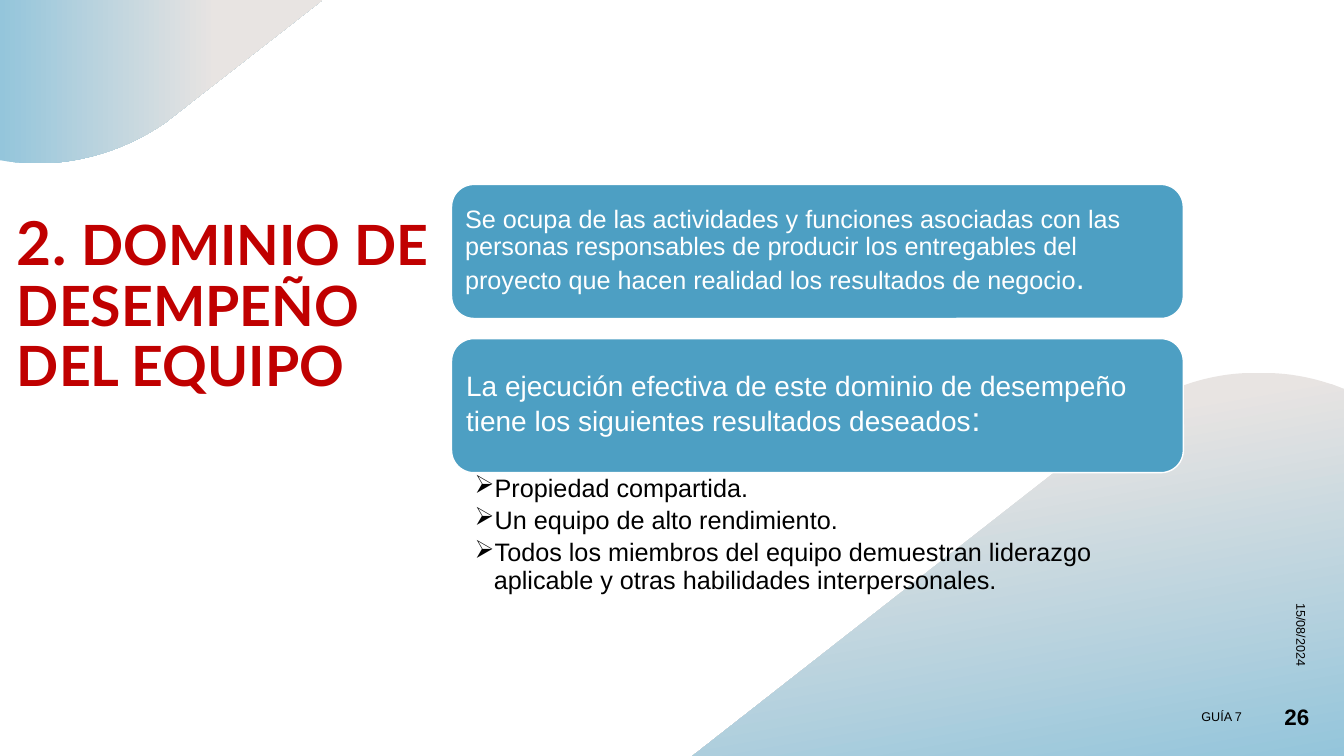
import pptx
import pptx.util
import pptx.dml.color
import pptx.enum.shapes
import pptx.enum.text
import pptx.oxml.ns
import lxml.etree

# Grid of 80 columns by 45 rows; every length below is in cells
COLS, ROWS = 80, 45
CELL = pptx.util.Inches(7.5) / ROWS
HUES = {"sand": "E8E4E2", "sky": "94C5DB", "card": "4D9FC3",
        "title": "C00000", "white": "FFFFFF", "black": "000000"}
SIDE = pptx.enum.text.PP_ALIGN
ANCHOR = pptx.enum.text.MSO_ANCHOR


def emu(cells):
    return pptx.util.Emu(round(cells * CELL))


def hue(name):
    return pptx.dml.color.RGBColor.from_string(HUES[name])


def setup(shape, insets, anchor):
    """Set insets (left, top, right, bottom) and anchor; return the frame."""
    frame = shape.text_frame
    frame.word_wrap = True
    frame.vertical_anchor = anchor
    (frame.margin_left, frame.margin_top,
     frame.margin_right, frame.margin_bottom) = map(emu, insets)
    return frame


def label(slide, box, insets=(0.6, 0.3, 0.6, 0.3), anchor=ANCHOR.MIDDLE):
    shape = slide.shapes.add_textbox(*map(emu, box))
    return shape, setup(shape, insets, anchor)


def write(para, runs, color, font="Arial", bold=False, lead=0.9, side=SIDE.LEFT):
    para.alignment = side
    para.line_spacing = lead
    for text, size in runs:
        run = para.add_run()
        run.text = text
        run.font.size = pptx.util.Pt(size)
        run.font.name = font
        run.font.bold = bold
        run.font.color.rgb = hue(color)


def curve(start, one, two, end, steps=24):
    """Points along a cubic curve, without its start."""
    for i in range(1, steps + 1):
        t = i / steps
        u = 1 - t
        yield tuple(u**3 * a + 3 * u * u * t * b + 3 * u * t * t * c + t**3 * d
                    for a, b, c, d in zip(start, one, two, end))


def wave(slide, box, nodes, stops, angle):
    """Gradient outline; a node is one point, or three that make a curve."""
    points = []
    for node in nodes:
        points += curve(points[-1], *node) if len(node) == 3 else [node]
    spots = [(emu(box[0] + x), emu(box[1] + y)) for x, y in points]
    form = slide.shapes.build_freeform(*spots[0], scale=1.0)
    form.add_line_segments(spots[1:], close=True)
    shape = form.convert_to_shape()
    shape.shadow.inherit = False
    shape.line.fill.background()
    shape.fill.gradient()
    shape.fill.gradient_angle = angle
    for stop, (place, name) in zip(shape.fill.gradient_stops, stops):
        stop.position = place
        stop.color.rgb = hue(name)


def decor(slide, box):
    left, top, wide, high = box
    # Hill in the lower right corner
    hill_w, hill_h = 38.78, 22.8
    wave(slide, (left + wide - hill_w, top + high - hill_h),
         [(33.96, 0), ((35.4, 0), (36.78, 0.24), (38.16, 0.72)),
          (hill_w, 0.96), (hill_w, hill_h), (0, hill_h),
          (25.74, 2.64), (25.98, 2.4),
          ((28.2, 0.9), (30.66, 0.06), (33.18, 0))],
         [(0.23, "sand"), (1, "sky")], 280)
    # Corner in the upper left
    wave(slide, (left, top),
         [(0, 0), (19.2, 0), (10.2, 7.02), (9.9, 7.26),
          ((7.74, 8.76), (5.28, 9.6), (2.76, 9.72)),
          (1.98, 9.72), (0.9, 9.66), (0, 9.54)],
         [(0, "sky"), (0.67, "sand")], 0)


def title(slide, box):
    frame = label(slide, box, (0.6, 0.3, 0.6, 8.52), ANCHOR.BOTTOM)[1]
    write(frame.paragraphs[0],
          [("2. ", 43.2), ("DOMINIO DE DESEMPEÑO DEL EQUIPO", 39.6)],
          "title", "Lato", True)


def card(slide, box, runs, inset):
    kind = pptx.enum.shapes.MSO_SHAPE.ROUNDED_RECTANGLE
    shape = slide.shapes.add_shape(kind, *map(emu, box))
    shape.shadow.inherit = False
    shape.fill.solid()
    shape.fill.fore_color.rgb = hue("card")
    shape.line.color.rgb = hue("white")
    shape.line.width = pptx.util.Pt(1)
    frame = setup(shape, [inset] * 4, ANCHOR.MIDDLE)
    write(frame.paragraphs[0], runs, "white")


def bullets(slide, box, items):
    frame = label(slide, box, (1.38, 0.18, 0.84, 0.18), ANCHOR.TOP)[1]
    for i, item in enumerate(items):
        para = frame.add_paragraph() if i else frame.paragraphs[0]
        write(para, [(item, 18)], "black")
        para.level = 1
        para.space_after = pptx.util.Pt(3.5)
        props = para._p.get_or_add_pPr()
        props.set("marL", str(emu(1.14)))
        props.set("indent", str(emu(-1.14)))
        mark = lxml.etree.SubElement(props, pptx.oxml.ns.qn("a:buChar"))
        mark.set("char", "➢")


def body(slide, box):
    left, top, wide, high = box
    tall, step = 7.98, 9.18
    cards = [
        ([("Se ocupa de las actividades y funciones asociadas con las personas "
           "responsables de producir los entregables del proyecto que hacen "
           "realidad los resultados de negocio", 18), (".", 23)], 0.42),
        ([("La ejecución efectiva de este dominio de desempeño tiene los "
           "siguientes resultados deseados", 20), (":", 24)], 0.48)]
    for i, (runs, inset) in enumerate(cards):
        card(slide, (left, top + i * step, wide, tall), runs, inset)
    # List under the last card
    drop = step + tall
    bullets(slide, (left, top + drop, wide, high - drop), [
        "Propiedad compartida.",
        "Un equipo de alto rendimiento.",
        "Todos los miembros del equipo demuestran liderazgo aplicable "
        "y otras habilidades interpersonales."])


def footer(slide, box):
    left, top, wide, high = box
    page = 4
    parts = [
        ("15/08/2024", 9, (left + 12.24, top - 11.1, 17.4, high), 90),
        ("GUÍA 7", 9, (left, top, wide - page, high), 0),
        ("26", 16, (left + wide - page, top, page, high), 0)]
    for text, size, spot, turn in parts:
        shape, frame = label(slide, spot)
        shape.rotation = turn
        write(frame.paragraphs[0], [(text, size)], "black",
              bold=size > 9, lead=1.0, side=SIDE.RIGHT)


def main():
    deck = pptx.Presentation()
    deck.slide_width, deck.slide_height = emu(COLS), emu(ROWS)
    slide = deck.slides.add_slide(deck.slide_layouts[6])
    decor(slide, (0, 0, COLS, ROWS))
    title(slide, (0.42, 12.78, 27.54, 19.44))
    body(slide, (26.88, 10.98, 43.56, 24.9))
    footer(slide, (56.52, 41.46, 22, 2.4))
    deck.save("out.pptx")


if __name__ == "__main__":
    main()
